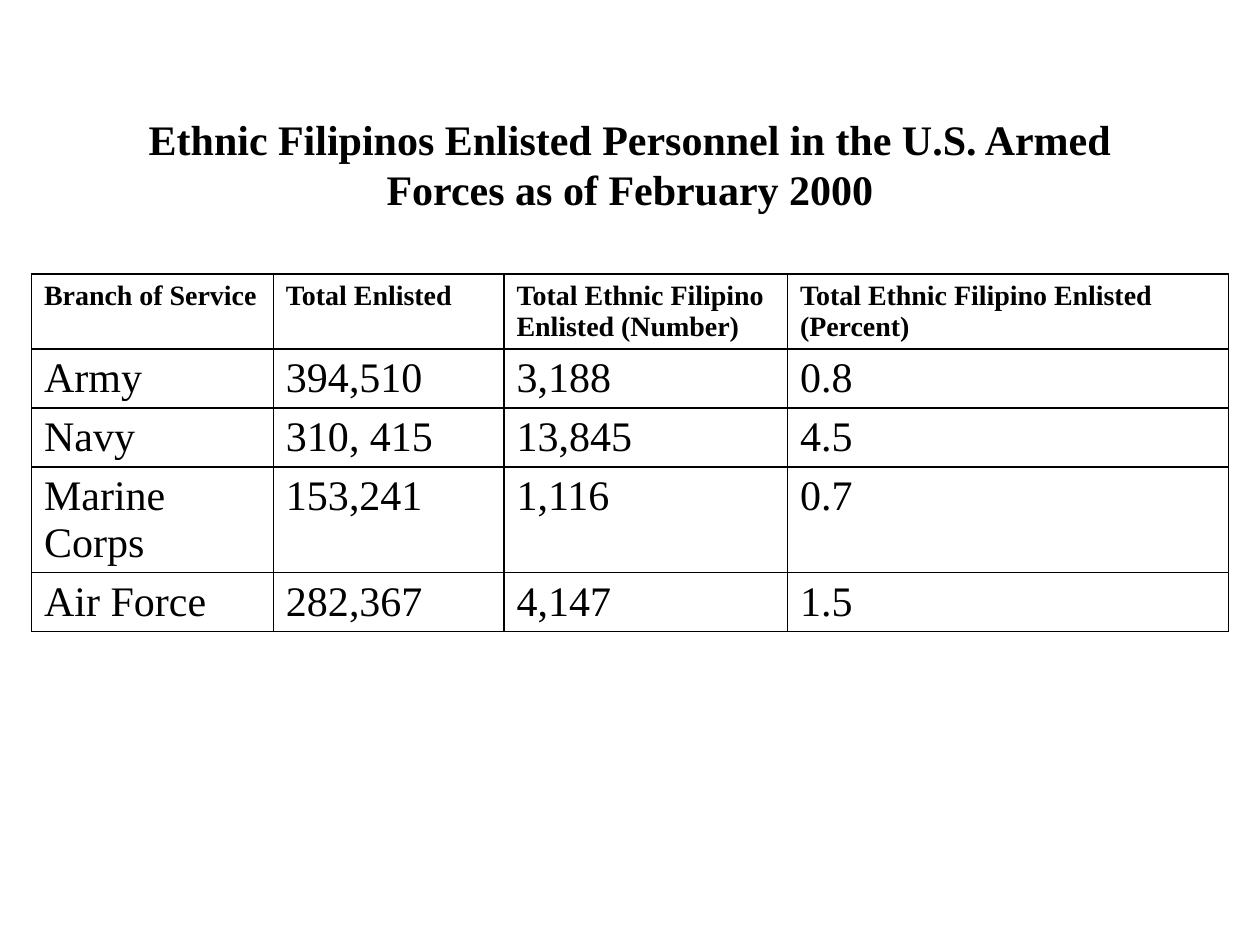
from lxml import etree
from pptx import Presentation
from pptx import util as u
from pptx.dml.color import RGBColor
from pptx.enum import text
from pptx.oxml.ns import qn

THEME = {
    "font": "Times New Roman",
    "ink": "000000",
    "paper": "FFFFFF",
    "large": 24,
    "header": 16,
    "border": 1,
}
COLUMN_WIDTHS = [1.92, 1.83, 2.25, 3.5]
ROW_HEIGHT = 0.41
ROWS = [
    ["Branch of Service", "Total Enlisted", "Total Ethnic Filipino Enlisted (Number)",
     "Total Ethnic Filipino Enlisted (Percent)"],
    ["Army", "394,510", "3,188", "0.8"],
    ["Navy", "310, 415", "13,845", "4.5"],
    ["Marine Corps", "153,241", "1,116", "0.7"],
    ["Air Force", "282,367", "4,147", "1.5"],
]


def write(frame, content, size=THEME["large"], bold=False, align=text.PP_ALIGN.LEFT):
    paragraph = frame.paragraphs[0]
    paragraph.alignment = align
    run = paragraph.add_run()
    run.text = content
    run.font.name = THEME["font"]
    run.font.size = u.Pt(size)
    run.font.bold = bold
    run.font.color.rgb = RGBColor.from_string(THEME["ink"])


def add_borders(cell):
    properties = cell._tc.get_or_add_tcPr()
    for position, side in enumerate(["lnL", "lnR", "lnT", "lnB"]):
        line = etree.Element(qn(f"a:{side}"), w=str(u.Pt(THEME["border"])))
        fill = etree.SubElement(line, qn("a:solidFill"))
        etree.SubElement(fill, qn("a:srgbClr"), val=THEME["ink"])
        properties.insert(position, line)


presentation = Presentation()
presentation.slide_width = u.Inches(10)
presentation.slide_height = u.Inches(7.5)
width, height = presentation.slide_width, presentation.slide_height
slide = presentation.slides.add_slide(presentation.slide_layouts[5])

title = slide.shapes.title
title.left, title.top = int(width * 0.075), int(height * 0.09)
title.width, title.height = int(width * 0.85), int(height / 6)
title.text_frame.word_wrap = True
title.text_frame.auto_size = text.MSO_AUTO_SIZE.NONE
title.text_frame.vertical_anchor = text.MSO_ANCHOR.MIDDLE
write(title.text_frame,
      "Ethnic Filipinos Enlisted Personnel in the U.S. Armed Forces as of February 2000",
      bold=True, align=text.PP_ALIGN.CENTER)

table = slide.shapes.add_table(
    len(ROWS), len(COLUMN_WIDTHS), int(width * 0.025), int(height * 0.29),
    u.Inches(sum(COLUMN_WIDTHS)), u.Inches(ROW_HEIGHT * len(ROWS))).table
table.first_row = False
table.horz_banding = False
for column, column_width in zip(table.columns, COLUMN_WIDTHS):
    column.width = u.Inches(column_width)

for row_index, row in enumerate(ROWS):
    is_header = row_index == 0
    table.rows[row_index].height = u.Inches(ROW_HEIGHT)
    for column_index, content in enumerate(row):
        cell = table.cell(row_index, column_index)
        cell.fill.solid()
        cell.fill.fore_color.rgb = RGBColor.from_string(THEME["paper"])
        add_borders(cell)
        write(cell.text_frame, content, bold=is_header,
              size=THEME["header"] if is_header else THEME["large"])

presentation.save("out.pptx")
